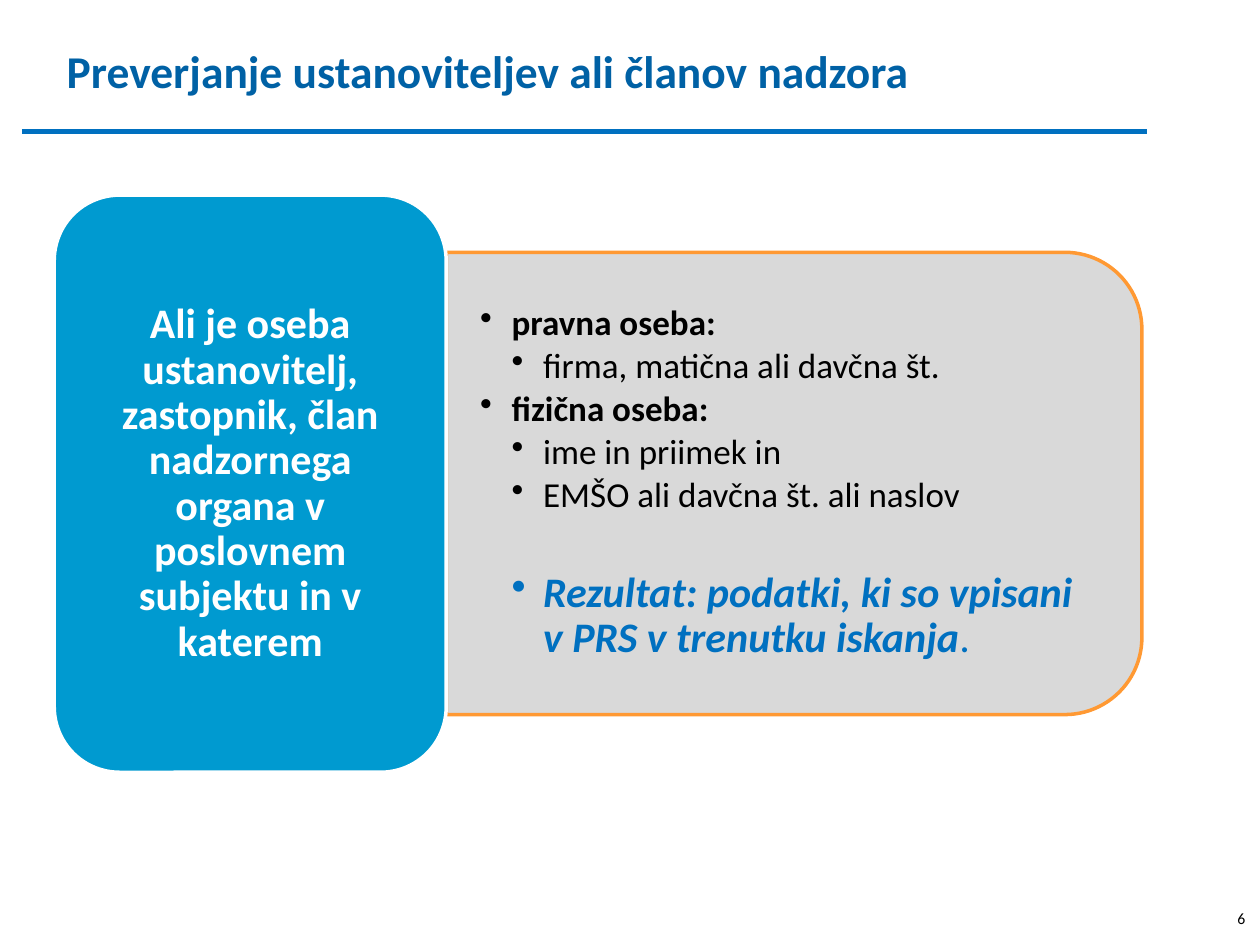
from lxml import etree
from pptx import Presentation
from pptx.dml.color import RGBColor
from pptx.enum import shapes, text
from pptx.oxml import ns
from pptx.util import Pt

WHITE = RGBColor(0xFF, 0xFF, 0xFF)
BLACK = RGBColor(0, 0, 0)
GREY = RGBColor(0xD9, 0xD9, 0xD9)
ORANGE = RGBColor(0xFF, 0x99, 0x33)
CYAN = RGBColor(0x00, 0x9A, 0xD0)
NAVY = RGBColor(0x00, 0x61, 0xA5)
BLUE = RGBColor(0x00, 0x70, 0xC0)
FONT = "Calibri"


def add_span(para, words, size=20, color=BLACK, bold=False, italic=False):
    span = para.add_run()
    span.text = words
    font = span.font
    font.name, font.size = FONT, Pt(size)
    font.bold, font.italic = bold, italic
    font.color.rgb = color


def add_box(page, left, top, width, height, inset=(7.2, 3.6), anchor=text.MSO_ANCHOR.TOP):
    box = page.shapes.add_textbox(Pt(left), Pt(top), Pt(width), Pt(height))
    frame = box.text_frame
    frame.word_wrap = True
    frame.vertical_anchor = anchor
    frame.margin_left = frame.margin_right = Pt(inset[0])
    frame.margin_top = frame.margin_bottom = Pt(inset[1])
    return frame


def add_panel(page, kind, left, top, width, height, fill, line):
    panel = page.shapes.add_shape(kind, Pt(left), Pt(top), Pt(width), Pt(height))
    panel.shadow.inherit = False
    panel.fill.solid()
    panel.fill.fore_color.rgb = fill
    panel.line.color.rgb = line
    panel.line.width = Pt(2)
    return panel


def set_bullet(para, level):
    props = para._p.get_or_add_pPr()
    props.set("marL", str(Pt(18 * level)))
    props.set("indent", str(-Pt(18)))
    etree.SubElement(props, ns.qn("a:buChar")).set("char", "•")
    para.level = level


def add_header(page, left, top, width, height):
    frame = add_box(page, left, top, width, height)
    add_span(frame.paragraphs[0], "Preverjanje ustanoviteljev ali članov nadzora", size=26, color=NAVY, bold=True)
    rule_y = Pt(top + 54)
    rule = page.shapes.add_connector(
        shapes.MSO_CONNECTOR.STRAIGHT, Pt(left - 18.5), rule_y, Pt(left + 624.5), rule_y)
    rule.line.color.rgb = BLUE
    rule.line.width = Pt(3)
    etree.SubElement(rule._element.spPr, ns.qn("a:effectLst"))


def add_details(page, left, top, width, height):
    panel = add_panel(
        page, shapes.MSO_SHAPE.ROUND_2_SAME_RECTANGLE,
        left + (width - height) / 2, top + (height - width) / 2, height, width, GREY, ORANGE)
    panel.rotation = 90
    frame = add_box(page, left, top + 13, width - 13, height - 26, (19.4, 10.2), text.MSO_ANCHOR.MIDDLE)
    result = dict(size=24, color=BLUE, bold=True, italic=True)
    items = [
        (1, "pravna oseba:", dict(bold=True)),
        (2, "firma, matična ali davčna št.", {}),
        (1, "fizična oseba:", dict(bold=True)),
        (2, "ime in priimek in", {}),
        (2, "EMŠO ali davčna št. ali naslov", {}),
        (2, "Rezultat: podatki, ki so vpisani v PRS v trenutku iskanja", result),
    ]
    for index, (level, words, style) in enumerate(items):
        para = frame.paragraphs[0] if index == 0 else frame.add_paragraph()
        set_bullet(para, level)
        para.line_spacing = 0.9
        para.space_before = Pt(0)
        para.space_after = Pt(3)
        add_span(para, words, **style)
    para.space_before = Pt(29)
    add_span(para, ".", size=24, color=BLUE)


def add_question(page, left, top, width, height):
    add_panel(page, shapes.MSO_SHAPE.ROUNDED_RECTANGLE, left, top, width, height, CYAN, WHITE)
    frame = add_box(page, left + 11, top + 11, width - 22, height - 22, anchor=text.MSO_ANCHOR.MIDDLE)
    para = frame.paragraphs[0]
    para.alignment = text.PP_ALIGN.CENTER
    para.line_spacing = 0.9
    add_span(
        para, "Ali je oseba ustanovitelj, zastopnik, član nadzornega organa v poslovnem subjektu in v katerem",
        size=24, color=WHITE, bold=True)


def add_page_number(page, left, top, width, height):
    frame = add_box(page, left, top, width, height)
    add_span(frame.paragraphs[0], "6", size=9)


def main():
    deck = Presentation()
    deck.slide_width, deck.slide_height = Pt(720), Pt(540)
    page = deck.slides.add_slide(deck.slide_layouts[6])
    add_details(page, 255, 144.2, 397.5, 264.2)
    add_question(page, 31, 111.5, 224, 329.8)
    add_header(page, 31, 21, 607, 39)
    add_page_number(page, 700, 515.5, 20, 24.5)
    deck.save("out.pptx")


if __name__ == "__main__":
    main()
